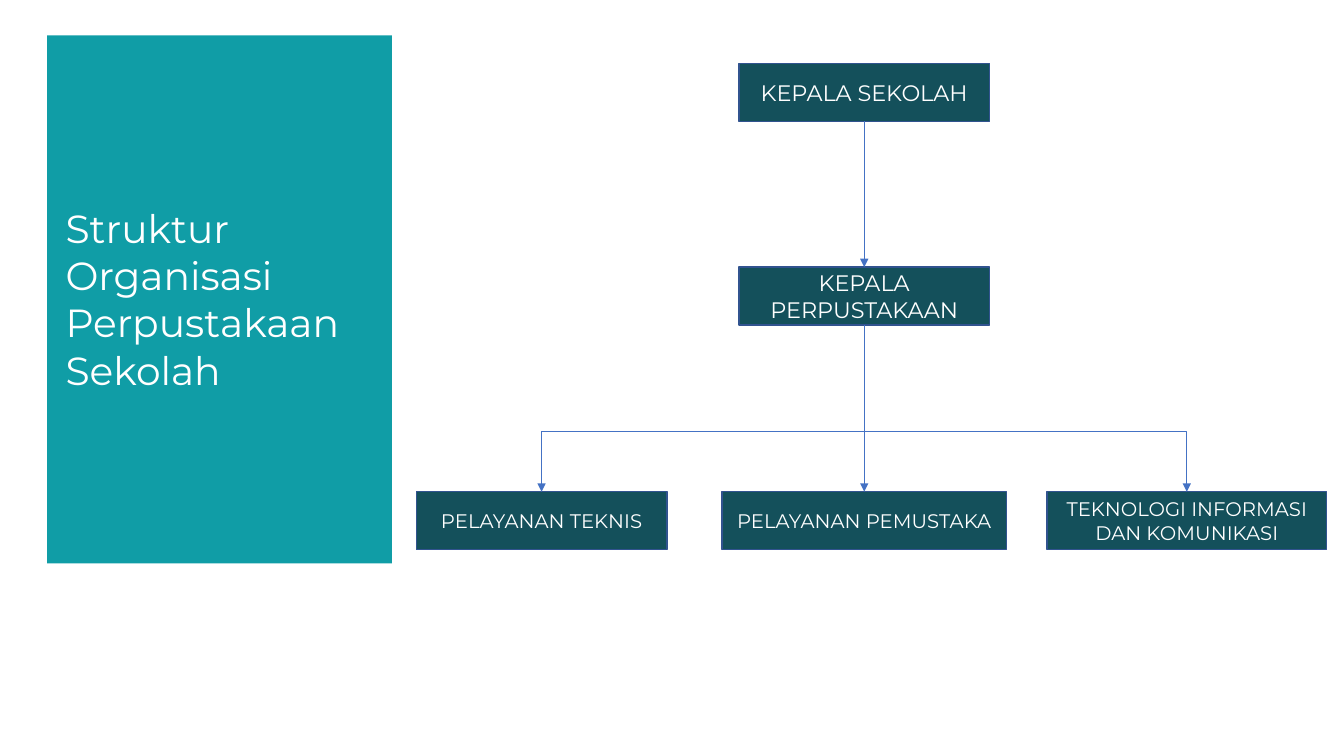
from dataclasses import dataclass

from lxml.etree import SubElement
from pptx import Presentation
from pptx.dml.color import RGBColor
from pptx.enum.shapes import MSO_CONNECTOR as Connector, MSO_SHAPE as Shape
from pptx.enum.text import MSO_ANCHOR as Anchor, MSO_AUTO_SIZE as AutoSize, PP_ALIGN as Align
from pptx.oxml.ns import qn
from pptx.shapes.autoshape import Shape as AutoShape
from pptx.shapes.connector import Connector as Link
from pptx.slide import Slide
from pptx.text.text import TextFrame
from pptx.util import Cm, Pt


@dataclass(frozen=True)
class Theme:
    font: str = "Montserrat"
    panel: RGBColor = RGBColor(0x10, 0x9D, 0xA6)
    box: RGBColor = RGBColor(0x14, 0x50, 0x5B)
    border: RGBColor = RGBColor(0x31, 0x53, 0x8F)
    arrow: RGBColor = RGBColor(0x44, 0x72, 0xC4)
    text: RGBColor = RGBColor(0xFF, 0xFF, 0xFF)
    title_size: int = 28
    head_size: int = 16
    unit_size: int = 14


@dataclass(frozen=True)
class Post:
    """A box of the chart; column counts from the middle, lengths are in cm."""
    label: str
    column: int
    top: float
    width: float
    size: int


THEME = Theme()
CENTRE = 21.78
COLUMN_STEP = 8.13
BOX_HEIGHT = 1.46
UNIT_TOP = 12.39
BRANCH_Y = 10.87
TOP_SIDE, BOTTOM_SIDE = 0, 2

PRINCIPAL = Post("KEPALA SEKOLAH", 0, 1.6, 6.32, THEME.head_size)
LIBRARIAN = Post("KEPALA PERPUSTAKAAN", 0, 6.73, 6.32, THEME.head_size)
UNITS = [
    Post("PELAYANAN TEKNIS", -1, UNIT_TOP, 6.32, THEME.unit_size),
    Post("PELAYANAN PEMUSTAKA", 0, UNIT_TOP, 7.16, THEME.unit_size),
    Post("TEKNOLOGI INFORMASI DAN KOMUNIKASI", 1, UNIT_TOP, 7.04, THEME.unit_size),
]


def write(frame: TextFrame, text: str, *, size: int, align: Align, anchor: Anchor) -> None:
    frame.text = text
    frame.word_wrap = True
    frame.vertical_anchor = anchor
    for paragraph in frame.paragraphs:
        paragraph.alignment = align
        font = paragraph.font
        font.name = THEME.font
        font.size = Pt(size)
        font.color.rgb = THEME.text


def add_rectangle(slide: Slide, left: float, top: float, width: float, height: float,
                  fill: RGBColor) -> AutoShape:
    rectangle = slide.shapes.add_shape(Shape.RECTANGLE, Cm(left), Cm(top), Cm(width), Cm(height))
    rectangle.shadow.inherit = False
    rectangle.fill.solid()
    rectangle.fill.fore_color.rgb = fill
    rectangle.line.fill.background()
    return rectangle


def add_title_panel(slide: Slide) -> None:
    panel = add_rectangle(slide, 1.19, 0.89, 8.69, 13.31, THEME.panel)
    title = slide.shapes.title
    title.element.addprevious(panel.element)
    title.left, title.top, title.width, title.height = Cm(1.4), Cm(5.03), Cm(8.26), Cm(5.05)
    write(title.text_frame, "Struktur Organisasi\nPerpustakaan Sekolah",
          size=THEME.title_size, align=Align.LEFT, anchor=Anchor.TOP)
    title.text_frame.auto_size = AutoSize.SHAPE_TO_FIT_TEXT


def add_post(slide: Slide, post: Post) -> AutoShape:
    left = CENTRE + post.column * COLUMN_STEP - post.width / 2
    box = add_rectangle(slide, left, post.top, post.width, BOX_HEIGHT, THEME.box)
    box.line.color.rgb = THEME.border
    box.line.width = Pt(1)
    write(box.text_frame, post.label, size=post.size, align=Align.CENTER, anchor=Anchor.MIDDLE)
    return box


def add_arrow(slide: Slide, kind: Connector, target: AutoShape) -> Link:
    """Draw an arrow from the branching point to the top of the target."""
    arrow = slide.shapes.add_connector(kind, Cm(CENTRE), Cm(BRANCH_Y), Cm(CENTRE), Cm(BRANCH_Y))
    arrow.end_connect(target, TOP_SIDE)
    arrow.line.color.rgb = THEME.arrow
    arrow.line.width = Pt(0.75)
    properties = arrow.element.spPr
    SubElement(properties.find(qn("a:ln")), qn("a:tailEnd"), type="triangle")
    SubElement(properties, qn("a:effectLst"))
    return arrow


def add_straight_arrow(slide: Slide, source: AutoShape, target: AutoShape) -> None:
    add_arrow(slide, Connector.STRAIGHT, target).begin_connect(source, BOTTOM_SIDE)


def add_branch_arrow(slide: Slide, target: AutoShape) -> None:
    """Draw an arrow with a single bend: sideways, then down."""
    arrow = add_arrow(slide, Connector.ELBOW, target)
    arrow.element.spPr.find(qn("a:prstGeom")).set("prst", "bentConnector2")


def main() -> None:
    deck = Presentation()
    deck.slide_width, deck.slide_height = Cm(33.87), Cm(19.05)
    slide = deck.slides.add_slide(deck.slide_layouts[5])

    add_title_panel(slide)
    principal = add_post(slide, PRINCIPAL)
    librarian = add_post(slide, LIBRARIAN)
    technical, readers, technology = [add_post(slide, unit) for unit in UNITS]

    add_straight_arrow(slide, principal, librarian)
    add_straight_arrow(slide, librarian, readers)
    for side_unit in (technical, technology):
        add_branch_arrow(slide, side_unit)

    deck.save("out.pptx")


if __name__ == "__main__":
    main()
